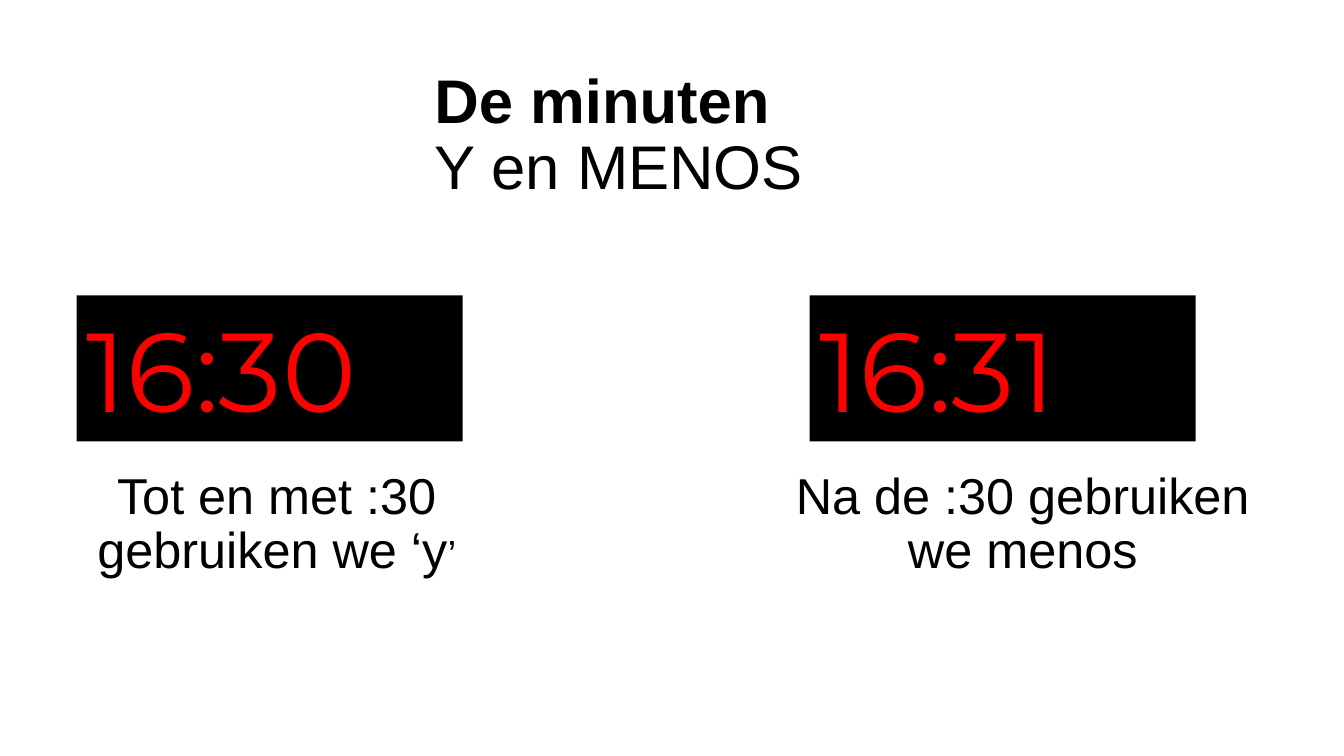
import pptx
import pptx.dml.color
import pptx.enum.shapes
import pptx.enum.text
import pptx.util

Inches = pptx.util.Inches
Pt = pptx.util.Pt
ALIGN = pptx.enum.text.PP_ALIGN


def color(hex_string):
    """Turn a hex string into a colour."""
    return pptx.dml.color.RGBColor.from_string(hex_string)


def style(font, size, hex_string="000000", name="Arial"):
    """Set the size, colour and typeface of a font."""
    font.size = Pt(size)
    font.name = name
    font.color.rgb = color(hex_string)


def add_text_frame(slide, left, top, width, height):
    """Add a wrapping text box and return its text frame."""
    box = slide.shapes.add_textbox(Inches(left), Inches(top), Inches(width), Inches(height))
    box.text_frame.word_wrap = True
    return box.text_frame


def add_title(slide, left, top, width, height):
    """Add the two-line heading, bold on its first line."""
    frame = add_text_frame(slide, left, top, width, height)
    frame.vertical_anchor = pptx.enum.text.MSO_ANCHOR.MIDDLE
    heading = frame.paragraphs[0]
    heading.line_spacing = 0.9
    style(heading.font, 44)
    topic = heading.add_run()
    topic.text = "De minuten"
    topic.font.bold = True
    style(topic.font, 44)
    heading.add_line_break()
    words = heading.add_run()
    words.text = "Y en MENOS"
    style(words.font, 44)


def add_clock(slide, left, top, width, height, time):
    """Add a black digital clock showing the time in red."""
    clock = slide.shapes.add_shape(
        pptx.enum.shapes.MSO_SHAPE.RECTANGLE,
        Inches(left), Inches(top), Inches(width), Inches(height))
    clock.shadow.inherit = False
    clock.fill.solid()
    clock.fill.fore_color.rgb = color("000000")
    clock.line.fill.background()
    frame = clock.text_frame
    frame.word_wrap = True
    frame.auto_size = pptx.enum.text.MSO_AUTO_SIZE.SHAPE_TO_FIT_TEXT
    frame.vertical_anchor = pptx.enum.text.MSO_ANCHOR.TOP
    digits = frame.paragraphs[0]
    digits.text = time
    digits.alignment = ALIGN.LEFT
    style(digits.font, 80, "FF0000", "Montserrat")


def add_rule(slide, left, top, width, height, pieces):
    """Add a centred rule made of (text, size) pieces."""
    rule = add_text_frame(slide, left, top, width, height).paragraphs[0]
    rule.alignment = ALIGN.CENTER
    rule.line_spacing = 0.9
    for words, size in pieces:
        piece = rule.add_run()
        piece.text = words
        style(piece.font, size)


def main():
    """Build the slide and save it."""
    presentation = pptx.Presentation()
    presentation.slide_width = Inches(13.33)
    presentation.slide_height = Inches(7.5)
    slide = presentation.slides.add_slide(presentation.slide_layouts[6])
    add_title(slide, 4.21, 0.63, 4.92, 1.45)
    examples = [
        (0.76, "16:30", 0.53, 4.43, [("Tot en met :30 gebruiken we ‘y", 36), ("’", 28)]),
        (8.03, "16:31", 7.73, 4.83, [("Na de :30 gebruiken we menos", 36)]),
    ]
    for clock_left, time, rule_left, rule_width, pieces in examples:
        add_clock(slide, clock_left, 2.93, 3.83, 1.45, time)
        add_rule(slide, rule_left, 4.62, rule_width, 4.76, pieces)
    presentation.save("out.pptx")


if __name__ == "__main__":
    main()
